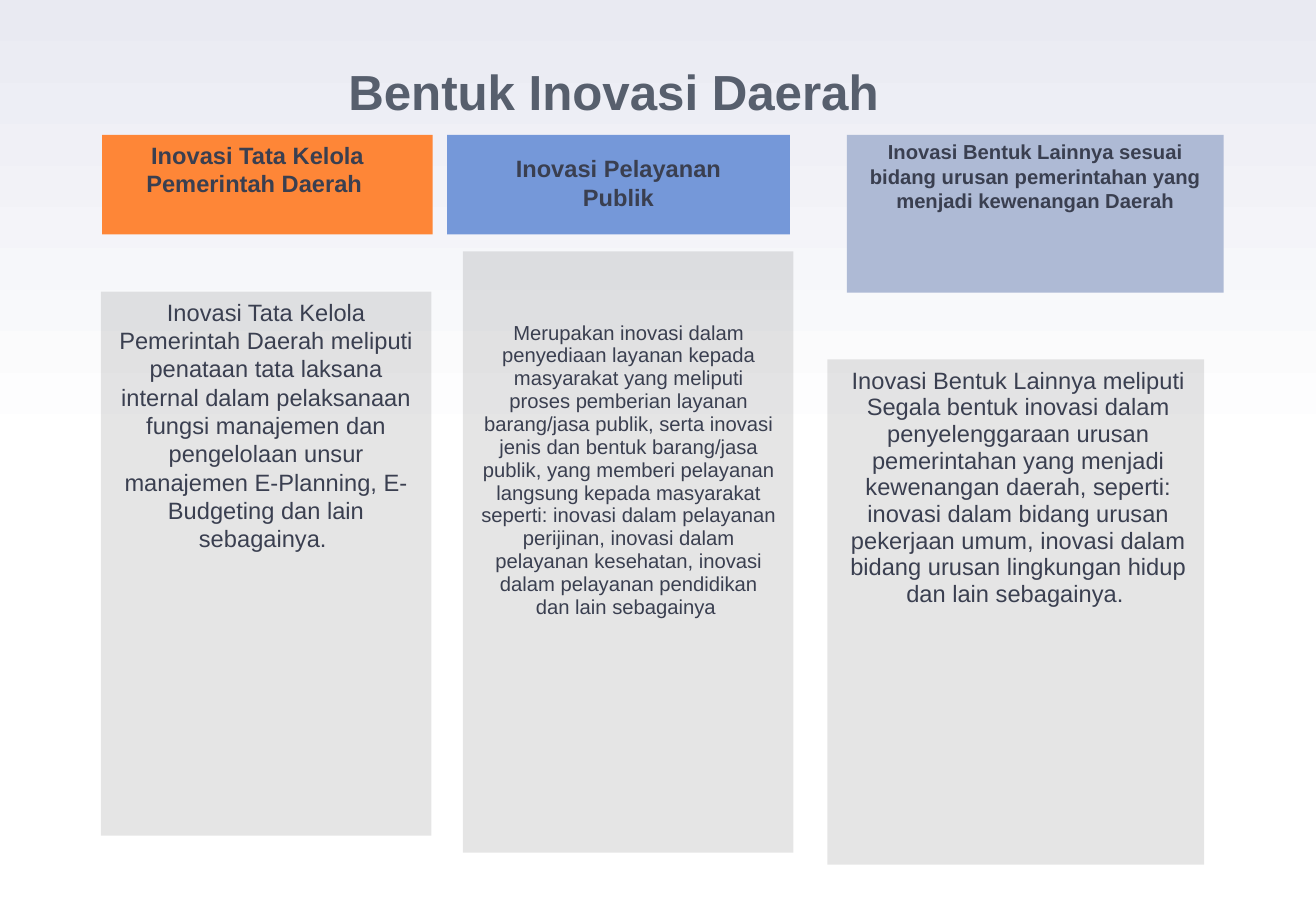
from dataclasses import dataclass

from pptx import Presentation
from pptx import util as u
from pptx.dml.color import RGBColor
from pptx.enum import shapes, text
from pptx.oxml import parse_xml
from pptx.oxml.ns import nsdecls


@dataclass(frozen=True)
class Theme:
    """Colours, font and type sizes of the slide."""
    font: str = "Arial"
    ink: str = "3A3F50"
    title_ink: str = "575F6D"
    panel: str = "000000"
    panel_alpha: int = 10
    governance: str = "FE8637"
    service: str = "7598D9"
    other: str = "AEBAD5"
    sky: str = "E9EAF2"
    white: str = "FFFFFF"
    title: float = 29.2
    large: int = 14
    small: int = 12


THEME = Theme()
TIGHT = (0.94, 8.3)
COLUMNS = [
    dict(panel=(0.83, 2.4, 2.72, 4.48), header=(0.84, 1.11, 2.72, 0.82),
         colour=THEME.governance,
         heading_box=(0.68, 1.11, 2.88, 1.04), heading_size=THEME.large,
         heading=["Inovasi Tata Kelola Pemerintah Daerah "],
         body_box=(0.83, 2.4, 2.72, 2.22), body_size=THEME.large, spacing=None,
         body="Inovasi Tata Kelola Pemerintah Daerah meliputi penataan tata "
              "laksana internal dalam pelaksanaan fungsi manajemen dan "
              "pengelolaan unsur manajemen E-Planning, E-Budgeting dan lain "
              "sebagainya. "),
    dict(panel=(3.81, 2.07, 2.72, 4.95), header=(3.68, 1.11, 2.82, 0.82),
         colour=THEME.service,
         heading_box=(4.14, 1.22, 1.9, 0.52), heading_size=THEME.large,
         heading=["Inovasi Pelayanan", " Publik "],
         body_box=(3.86, 2.6, 2.63, 4.28), body_size=THEME.small, spacing=TIGHT,
         body="Merupakan inovasi dalam penyediaan layanan kepada masyarakat "
              "yang meliputi proses pemberian layanan barang/jasa publik, "
              "serta inovasi jenis dan bentuk barang/jasa publik, yang memberi "
              "pelayanan langsung kepada masyarakat seperti: inovasi dalam "
              "pelayanan perijinan, inovasi dalam pelayanan kesehatan, inovasi "
              "dalam pelayanan pendidikan dan lain sebagainya "),
    dict(panel=(6.81, 2.96, 3.1, 4.16), header=(6.97, 1.11, 3.1, 1.3),
         colour=THEME.other,
         heading_box=(6.97, 1.1, 3.1, 1.31), heading_size=THEME.small,
         heading=["Inovasi Bentuk Lainnya sesuai bidang urusan pemerintahan "
                  "yang menjadi kewenangan Daerah"],
         body_box=(6.85, 2.98, 3.06, 2.09), body_size=THEME.large, spacing=TIGHT,
         body="Inovasi Bentuk Lainnya meliputi Segala bentuk inovasi dalam "
              "penyelenggaraan urusan pemerintahan yang menjadi kewenangan "
              "daerah, seperti: inovasi dalam bidang urusan pekerjaan umum, "
              "inovasi dalam bidang urusan lingkungan hidup dan lain "
              "sebagainya. "),
]


def paint_background(slide):
    """Fade the slide from white at mid-height to a pale sky at the top."""
    fill = slide.background.fill
    fill.gradient()
    fill.gradient_angle = 90
    stops = ((0.5, THEME.white), (1, THEME.sky))
    for stop, (position, colour) in zip(fill.gradient_stops, stops):
        stop.position = position
        stop.color.rgb = RGBColor.from_string(colour)


def add_block(parent, box, colour, alpha=None):
    """Add a plain rectangle, see-through when alpha percent is given."""
    block = parent.add_shape(shapes.MSO_SHAPE.RECTANGLE, *map(u.Inches, box))
    block.shadow.inherit = False
    block.line.fill.background()
    block.fill.solid()
    block.fill.fore_color.rgb = RGBColor.from_string(colour)
    if alpha is not None:
        tint = block.fill._xPr.find(".//{*}srgbClr")
        tint.append(parse_xml(f'<a:alpha {nsdecls("a")} val="{alpha * 1000}"/>'))


def add_text(parent, box, lines, size, colour=THEME.ink, bold=False,
             spacing=None, wrap=True, anchor=text.MSO_ANCHOR.TOP):
    """Add a centred text box with one paragraph per line."""
    frame = parent.add_textbox(*map(u.Inches, box)).text_frame
    frame.word_wrap = wrap
    frame.vertical_anchor = anchor
    for index, line in enumerate(lines):
        paragraph = frame.add_paragraph() if index else frame.paragraphs[0]
        paragraph.alignment = text.PP_ALIGN.CENTER
        if spacing:
            paragraph.line_spacing = spacing[0]
            paragraph.space_after = u.Pt(spacing[1])
        run = paragraph.add_run()
        run.text = line
        run.font.name = THEME.font
        run.font.size = u.Pt(size)
        run.font.bold = bold
        run.font.color.rgb = RGBColor.from_string(colour)


def add_column(slide, column):
    """Group one kind of innovation: panel, header block and their texts."""
    group = slide.shapes.add_group_shape().shapes
    add_block(group, column["panel"], THEME.panel, THEME.panel_alpha)
    add_block(group, column["header"], column["colour"])
    add_text(group, column["body_box"], [column["body"]], column["body_size"],
             spacing=column["spacing"])
    add_text(group, column["heading_box"], column["heading"],
             column["heading_size"], bold=True,
             wrap=len(column["heading"]) == 1)


def main():
    """Build the slide and save it."""
    deck = Presentation()
    deck.slide_width, deck.slide_height = u.Inches(10.83), u.Inches(7.5)
    slide = deck.slides.add_slide(deck.slide_layouts[6])
    paint_background(slide)
    add_text(slide.shapes, (1.28, 0.4, 7.54, 0.7), ["Bentuk Inovasi Daerah"],
             THEME.title, THEME.title_ink, bold=True,
             anchor=text.MSO_ANCHOR.MIDDLE)
    for column in COLUMNS:
        add_column(slide, column)
    deck.save("out.pptx")


if __name__ == "__main__":
    main()
